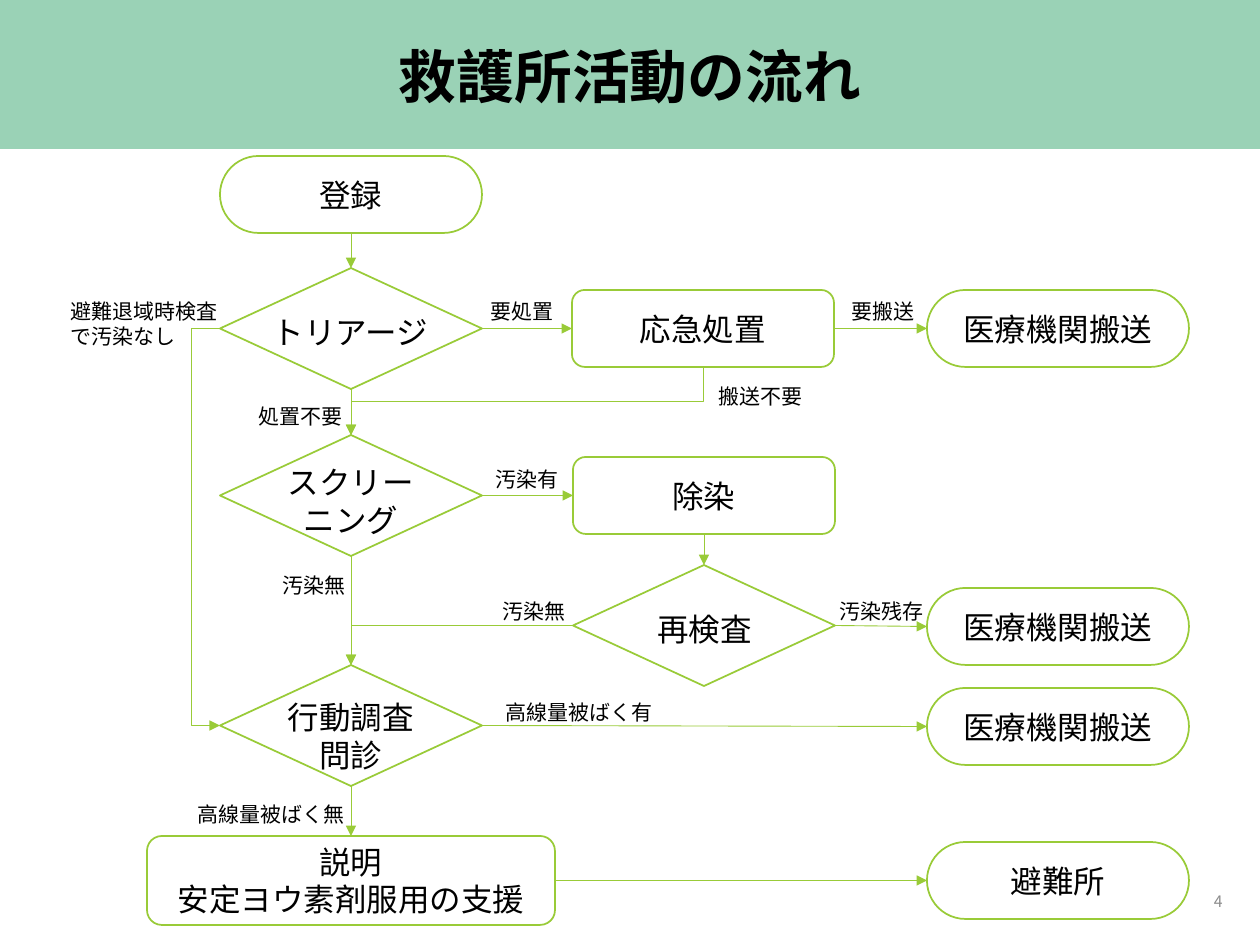
"""Build the first-aid station flow chart slide."""
from lxml.etree import SubElement
from pptx import Presentation
from pptx.dml.color import RGBColor
from pptx.enum.shapes import MSO_CONNECTOR as Link, MSO_SHAPE as Shape
from pptx.enum.text import MSO_ANCHOR as Anchor, MSO_AUTO_SIZE as Fit, PP_ALIGN as Align
from pptx.oxml.ns import qn
from pptx.util import Pt

PX = 914400 / 126
FONT = "Noto Sans CJK JP"
GREEN, BAND, WHITE, BLACK, GREY = "99CB38", "37A76F", "FFFFFF", "000000", "8C8C8C"
TOP, LEFT, BOTTOM, RIGHT = range(4)

SIZES = {"terminal": (262, 77), "process": (262, 77), "decision": (262, 121), "wide": (408, 89)}
NODES = {
    "register": ("terminal", 220, 156, "登録"),
    "triage": ("decision", 220, 268, ""),
    "screening": ("decision", 220, 435, ""),
    "interview": ("decision", 220, 665, ""),
    "first aid": ("process", 572, 290, "応急処置"),
    "decontamination": ("process", 573, 457, "除染"),
    "recheck": ("decision", 573, 565, ""),
    "hospital after aid": ("terminal", 927, 290, "医療機関搬送"),
    "hospital after recheck": ("terminal", 927, 588, "医療機関搬送"),
    "hospital after interview": ("terminal", 927, 688, "医療機関搬送"),
    "shelter": ("terminal", 927, 842, "避難所"),
    "explanation": ("wide", 147, 836, "説明\n安定ヨウ素剤服用の支援"),
}
ARROWS = [
    ("register", BOTTOM, "triage", TOP),
    ("triage", BOTTOM, "screening", TOP),
    ("triage", RIGHT, "first aid", LEFT),
    ("screening", RIGHT, "decontamination", LEFT),
    ("screening", BOTTOM, "interview", TOP),
    ("first aid", RIGHT, "hospital after aid", LEFT),
    ("decontamination", BOTTOM, "recheck", TOP),
    ("recheck", RIGHT, "hospital after recheck", LEFT),
    ("interview", BOTTOM, "explanation", TOP),
    ("interview", RIGHT, "hospital after interview", LEFT),
    ("explanation", RIGHT, "shelter", LEFT),
]
DECISION_TEXTS = [
    (258, 307, 184, 51, "トリアージ", False),
    (268, 457, 166, 89, "スクリーニング", True),
    (268, 692, 166, 89, "行動調査\n問診", True),
    (644, 604, 121, 51, "再検査", False),
]
LABELS = [
    (478, 292, 89, 38, "要処置", False),
    (246, 397, 111, 38, "処置不要", False),
    (839, 292, 89, 38, "要搬送", False),
    (706, 377, 111, 38, "搬送不要", False),
    (483, 460, 89, 38, "汚染有", False),
    (270, 566, 89, 38, "汚染無", False),
    (827, 592, 111, 38, "汚染残存", False),
    (185, 795, 174, 38, "高線量被ばく無", False),
    (490, 592, 89, 38, "汚染無", False),
    (493, 693, 174, 38, "高線量被ばく有", False),
    (58, 292, 188, 63, "避難退域時検査で汚染なし", True),
]


def emu(*lengths):
    return [round(length * PX) for length in lengths]


def color(code):
    return RGBColor.from_string(code)


def write(box, text, size, align=Align.CENTER, code=BLACK, bold=False):
    box.text_frame.text = text
    for para in box.text_frame.paragraphs:
        para.alignment = align
        for span in para.runs:
            span.font.size, span.font.bold, span.font.name = Pt(size), bold, FONT
            span.font.color.rgb = color(code)
            SubElement(span.font._element, qn("a:ea"), typeface=FONT)


def add_text(page, area, text, size, wrap=True, anchor=Anchor.TOP, fit=Fit.NONE, **style):
    box = page.shapes.add_textbox(*emu(*area))
    frame = box.text_frame
    frame.word_wrap, frame.vertical_anchor, frame.auto_size = wrap, anchor, fit
    write(box, text, size, **style)
    return box


def add_node(page, kind, x, y, text):
    preset = Shape.DIAMOND if kind == "decision" else Shape.ROUNDED_RECTANGLE
    box = page.shapes.add_shape(preset, *emu(x, y, *SIZES[kind]))
    box.shadow.inherit = False
    box.fill.solid()
    box.fill.fore_color.rgb = color(WHITE)
    box.line.color.rgb = color(GREEN)
    box.line.width = Pt(1)
    if kind == "terminal":
        box.adjustments[0] = 0.5
    if text:
        box.text_frame.vertical_anchor = Anchor.MIDDLE
        write(box, text, 18)
    return box


def add_arrow(page, kind, start=(0, 0), end=(0, 0)):
    arrow = page.shapes.add_connector(kind, *emu(*start, *end))
    arrow.line.color.rgb = color(GREEN)
    arrow.line.width = Pt(0.5)
    SubElement(arrow.line._get_or_add_ln(), qn("a:tailEnd"), type="triangle")
    SubElement(arrow._element.spPr, qn("a:effectLst"))
    return arrow


def site(name, side):
    kind, x, y, _ = NODES[name]
    width, height = SIZES[kind]
    return {
        TOP: (x + width / 2, y),
        LEFT: (x, y + height / 2),
        BOTTOM: (x + width / 2, y + height),
        RIGHT: (x + width, y + height / 2),
    }[side]


def add_elbows(page):
    x, y = site("triage", LEFT)
    bypass = add_arrow(page, Link.ELBOW, (x + 1, y), site("interview", LEFT))
    guides = bypass._element.spPr.find(qn("a:prstGeom")).get_or_add_avLst()
    SubElement(guides, qn("a:gd"), name="adj1", fmla="val 3000000")

    (x1, y1), (x2, y2) = site("first aid", BOTTOM), site("screening", TOP)
    drop, run = y2 - y1, x1 - x2
    left, top = (x1 + x2 - drop) / 2, (y1 + y2 - run) / 2
    rejoin = add_arrow(page, Link.ELBOW, (left, top), (left + drop, top + run))
    rejoin._element.spPr.find(qn("a:xfrm")).set("rot", "5400000")

    cleared = add_arrow(page, Link.ELBOW, site("recheck", LEFT), site("interview", TOP))
    cleared._element.spPr.find(qn("a:prstGeom")).set("prst", "bentConnector2")


def main():
    deck = Presentation()
    deck.slide_width, deck.slide_height = emu(1260, 945)
    page = deck.slides.add_slide(deck.slide_layouts[6])

    band = page.shapes.add_shape(Shape.RECTANGLE, *emu(0, 0, 1260, 149))
    band.shadow.inherit = False
    band.fill.solid()
    band.fill.fore_color.rgb = color(BAND)
    tint = band._element.spPr.find(qn("a:solidFill"))[0]
    SubElement(tint, qn("a:alpha"), val="50000")
    band.line.fill.background()
    title = add_text(page, (87, 26, 1086, 107), "救護所活動の流れ", 33,
                     anchor=Anchor.MIDDLE, bold=True)
    title.text_frame.paragraphs[0].line_spacing = 0.9

    boxes = {name: add_node(page, *node) for name, node in NODES.items()}
    for source, source_side, target, target_side in ARROWS:
        arrow = add_arrow(page, Link.STRAIGHT)
        arrow.begin_connect(boxes[source], source_side)
        arrow.end_connect(boxes[target], target_side)
    add_elbows(page)

    for texts, size, align in ((DECISION_TEXTS, 18, Align.CENTER), (LABELS, 12, Align.LEFT)):
        for *area, text, wrap in texts:
            add_text(page, area, text, size, wrap, fit=Fit.SHAPE_TO_FIT_TEXT, align=align)
    add_text(page, (951, 876, 284, 50), "4", 9, anchor=Anchor.MIDDLE,
             align=Align.RIGHT, code=GREY)
    deck.save("out.pptx")


if __name__ == "__main__":
    main()
